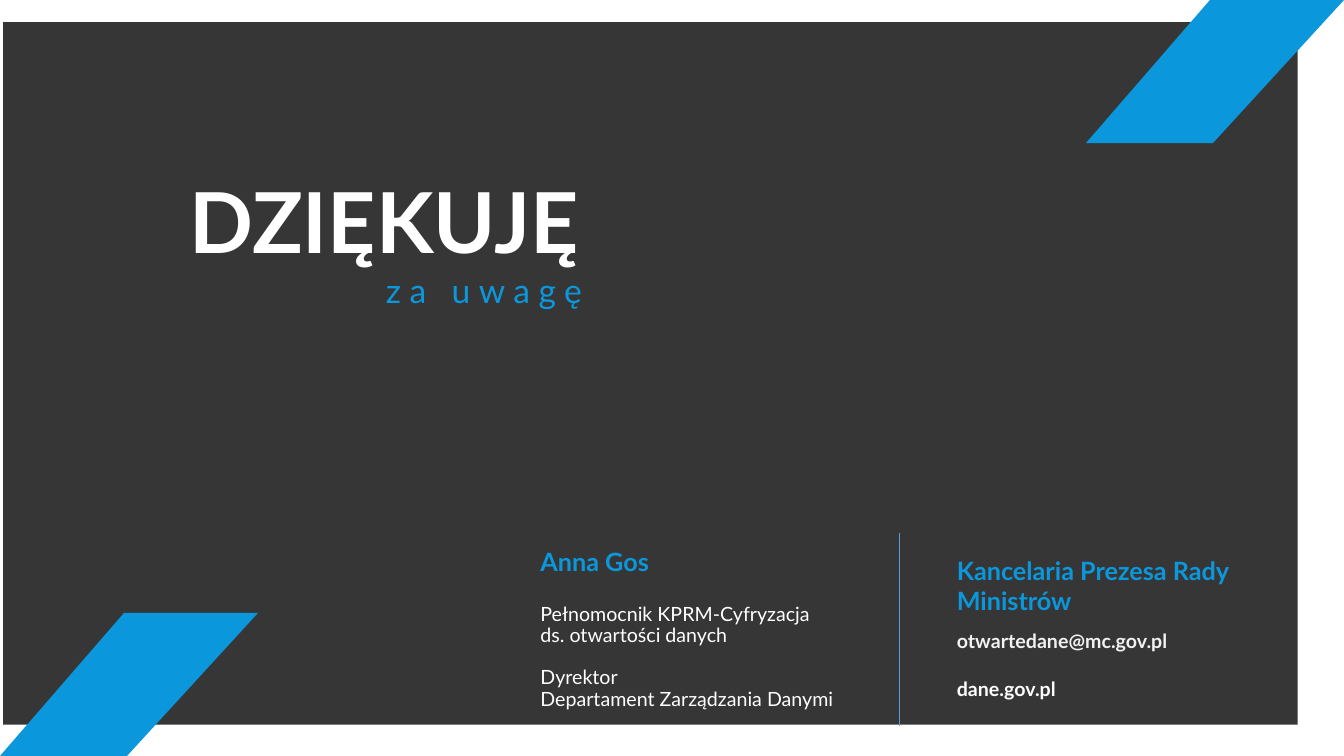
from lxml import etree
from pptx import Presentation, util as u
from pptx.dml.color import RGBColor
from pptx.enum import shapes, text
from pptx.oxml.ns import qn

WIDTH, HEIGHT = u.Inches(13.33), u.Inches(7.5)
BLACK = RGBColor(0x00, 0x00, 0x00)
WHITE = RGBColor(0xFF, 0xFF, 0xFF)
PALE = RGBColor(0xF2, 0xF2, 0xF2)
BLUE = RGBColor(0x0B, 0x97, 0xDB)
LINE_BLUE = RGBColor(0x5B, 0x9B, 0xD5)
FONT = "Lato"
TWO_CONTENT = 3
BAND_WIDTH, BAND_HEIGHT = 19.2, 18.93


def across(share):
    """Length as a percentage of the slide width."""
    return round(WIDTH * share / 100)


def down(share):
    """Length as a percentage of the slide height."""
    return round(HEIGHT * share / 100)


def place(box, left, top, width, height):
    box.left, box.top = across(left), down(top)
    box.width, box.height = across(width), down(height)


def paint(shape, color):
    shape.shadow.inherit = False
    shape.fill.solid()
    shape.fill.fore_color.rgb = color
    shape.line.fill.background()


def add_panel(page, left, top, width, height, opacity):
    panel = page.shapes.add_shape(
        shapes.MSO_SHAPE.RECTANGLE,
        across(left), down(top), across(width), down(height))
    paint(panel, BLACK)
    color = panel.fill._xPr.find(qn("a:solidFill"))[0]
    etree.SubElement(color, qn("a:alpha")).set("val", str(opacity * 1000))


def add_band(page, left, top):
    """Slanted band: lower edge starts at the left, upper edge ends right."""
    bottom = top + BAND_HEIGHT
    corners = [(left + 9.45, bottom), (left + BAND_WIDTH, top), (left + 9.23, top)]
    builder = page.shapes.build_freeform(across(left), down(bottom))
    builder.add_line_segments([(across(x), down(y)) for x, y in corners])
    paint(builder.convert_to_shape(), BLUE)


def add_divider(page, x, top, bottom):
    divider = page.shapes.add_connector(
        shapes.MSO_CONNECTOR.STRAIGHT,
        across(x), down(bottom), across(x), down(top))
    divider.line.color.rgb = LINE_BLUE
    divider.line.width = u.Pt(0.5)
    etree.SubElement(divider._element.spPr, qn("a:effectLst"))


def prepare(page, box, wrap=True):
    """Bring a text box to the front and set up its frame."""
    page.shapes._spTree.append(box._element)
    frame = box.text_frame
    frame.word_wrap = wrap
    frame.auto_size = text.MSO_AUTO_SIZE.NONE
    frame.vertical_anchor = text.MSO_ANCHOR.TOP
    frame.margin_left = frame.margin_right = u.Inches(0.1)
    frame.margin_top = frame.margin_bottom = u.Inches(0.05)


def write(box, words, size=14, color=WHITE, bold=False, before=0,
          leading=1.0, tracking=0):
    """Write one paragraph, filling the first one if it is still empty."""
    frame = box.text_frame
    para = frame.paragraphs[0] if not frame.text else frame.add_paragraph()
    para.alignment = text.PP_ALIGN.LEFT
    para.line_spacing = leading
    para.space_before, para.space_after = u.Pt(before), u.Pt(0)
    properties = para._p.get_or_add_pPr()
    properties.set("marL", "0")
    properties.set("indent", "0")
    etree.SubElement(properties, qn("a:buNone"))
    span = para.add_run()
    span.text = words
    span.font.name, span.font.size = FONT, u.Pt(size)
    span.font.bold, span.font.color.rgb = bold, color
    if tracking:
        span._r.get_or_add_rPr().set("spc", str(tracking * 100))


def main():
    deck = Presentation()
    deck.slide_width, deck.slide_height = WIDTH, HEIGHT
    page = deck.slides.add_slide(deck.slide_layouts[TWO_CONTENT])

    # Background panel and corner bands
    add_panel(page, 0.23, 2.93, 96.32, 92.93, opacity=79)
    add_band(page, 0, 100 - BAND_HEIGHT)
    add_band(page, 100 - BAND_WIDTH, 0)

    # Thanks
    title, person, office = page.placeholders
    place(title, 13.35, 21.73, 32.71, 14.8)
    prepare(page, title, wrap=False)
    write(title, "DZIĘKUJĘ", size=60, bold=True)
    subtitle = page.shapes.add_textbox(
        across(27.98), down(35.07), across(17.4), down(6.67))
    prepare(page, subtitle, wrap=False)
    write(subtitle, "za uwagę", size=24, color=BLUE, tracking=6)

    # Speaker
    place(person, 39.46, 72, 28.28, 24)
    prepare(page, person)
    write(person, "Anna Gos", size=18, color=BLUE, bold=True, leading=0.9)
    for words, before in [("Pełnomocnik KPRM-Cyfryzacja", 20),
                          ("ds. otwartości danych", 0),
                          ("Dyrektor", 15),
                          ("Departament Zarządzania Danymi", 0)]:
        write(person, words, before=before, leading=0.9)

    # Office and contact
    place(office, 70.44, 72.8, 23.48, 20.67)
    prepare(page, office)
    write(office, "Kancelaria Prezesa Rady Ministrów", size=18, color=BLUE, bold=True)
    write(office, "otwartedane@mc.gov.pl", color=PALE, bold=True, before=9.6)
    write(office, "dane.gov.pl", bold=True, before=17)
    add_divider(page, 66.92, 70.53, 96)

    deck.save("out.pptx")


if __name__ == "__main__":
    main()
